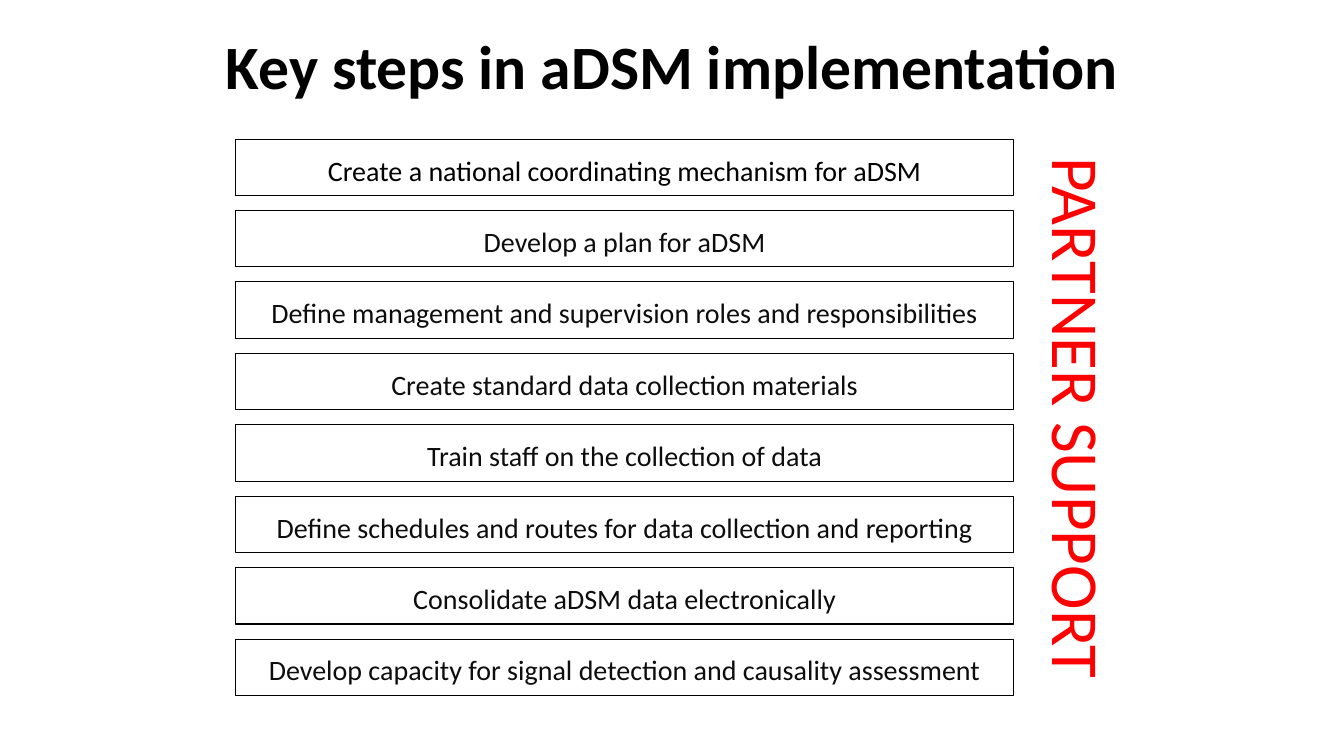
from pptx import Presentation
from pptx import util as u
from pptx.dml.color import RGBColor
from pptx.enum import shapes, text

BLACK = RGBColor(0x00, 0x00, 0x00)
INK = RGBColor(0x0D, 0x0D, 0x0D)
WHITE = RGBColor(0xFF, 0xFF, 0xFF)
RED = RGBColor(0xFF, 0x00, 0x00)

STEPS = [
    "Create a national coordinating mechanism for aDSM",
    "Develop a plan for aDSM",
    "Define management and supervision roles and responsibilities",
    "Create standard data collection materials",
    "Train staff on the collection of data",
    "Define schedules and routes for data collection and reporting",
    "Consolidate aDSM data electronically",
    "Develop capacity for signal detection and causality assessment",
]
TOP, LAST = 1.38, 6.34
PITCH = (LAST - TOP) / (len(STEPS) - 1)


class Deck:
    """Holds the slide and its font, and draws labels and step boxes."""

    font = "Calibri"

    def __init__(self, slide):
        self.slide = slide
        self.group = slide.shapes.add_group_shape()

    def words(self, shape, words, size, color, bold=False):
        frame = shape.text_frame
        frame.word_wrap = True
        frame.vertical_anchor = text.MSO_ANCHOR.MIDDLE
        para = frame.paragraphs[0]
        para.alignment = text.PP_ALIGN.CENTER
        run = para.add_run()
        run.text = words
        run.font.name = self.font
        run.font.size = u.Pt(size)
        run.font.bold = bold
        run.font.color.rgb = color
        return para

    def label(self, box, words, size, color, bold=False, turn=0):
        shape = self.slide.shapes.add_textbox(*map(u.Inches, box))
        shape.rotation = turn
        self.words(shape, words, size, color, bold)

    def step(self, top, words, color, fill=None):
        box = map(u.Inches, (2.34, top, 7.71, 0.56))
        shape = self.group.shapes.add_shape(shapes.MSO_SHAPE.RECTANGLE, *box)
        shape.shadow.inherit = False
        if fill is None:
            shape.fill.background()
        else:
            shape.fill.solid()
            shape.fill.fore_color.rgb = fill
        shape.line.color.rgb = BLACK
        shape.line.width = u.Pt(0.75)
        para = self.words(shape, words, 20, color)
        para.line_spacing = 1.15
        para.space_after = u.Pt(10)


def main():
    prs = Presentation()
    prs.slide_width = u.Inches(13.33)
    prs.slide_height = u.Inches(7.5)
    deck = Deck(prs.slides.add_slide(prs.slide_layouts[6]))
    deck.label((2.1, 0.21, 9.14, 0.87), "Key steps in aDSM implementation",
               44, BLACK, bold=True)
    for i, words in enumerate(STEPS):
        look = (INK, WHITE) if i else (BLACK, None)
        deck.step(TOP + i * PITCH, words, *look)
    deck.label((7.94, 3.69, 5.52, 0.91), "PARTNER SUPPORT", 48, RED, turn=90)
    prs.save("out.pptx")


if __name__ == "__main__":
    main()
